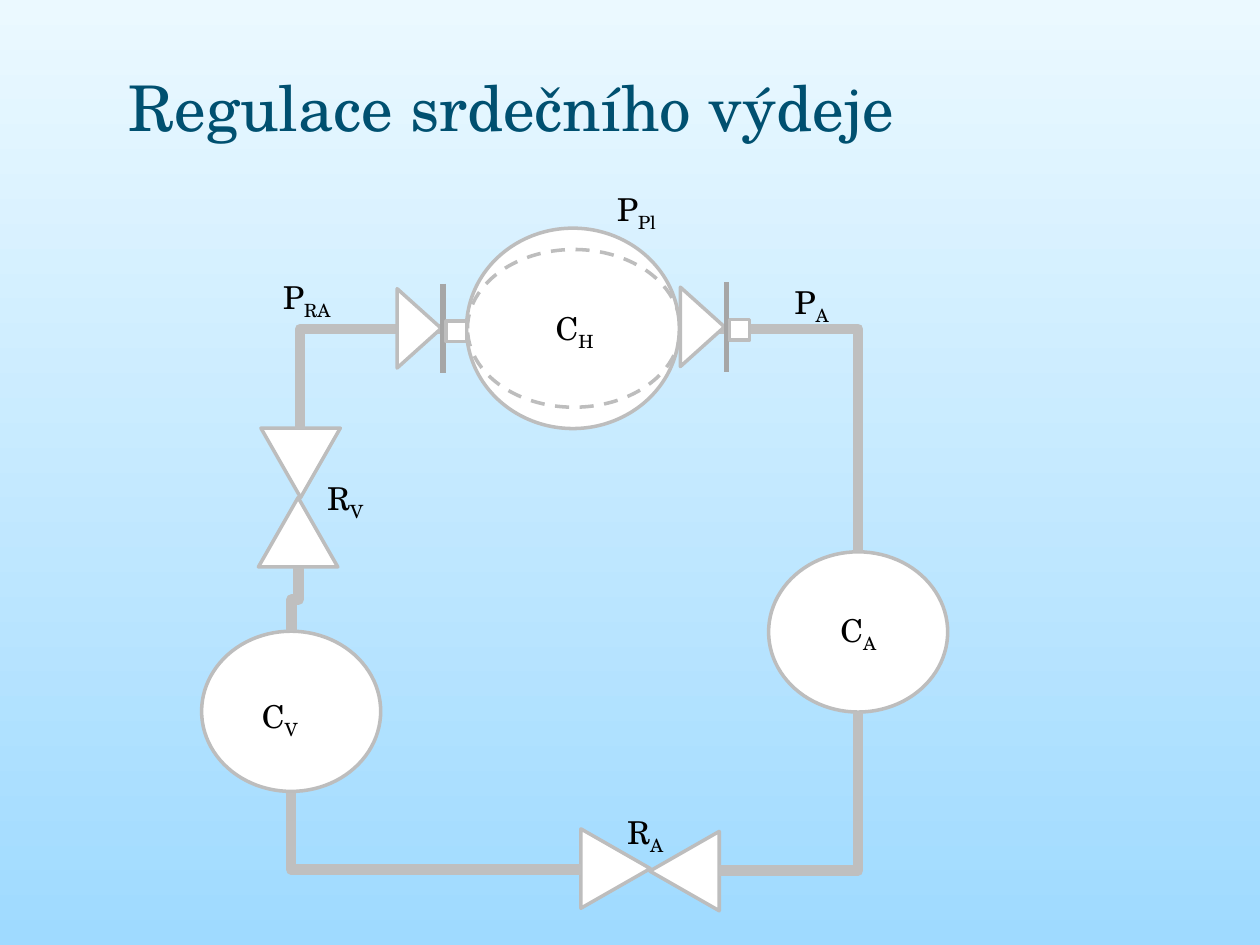
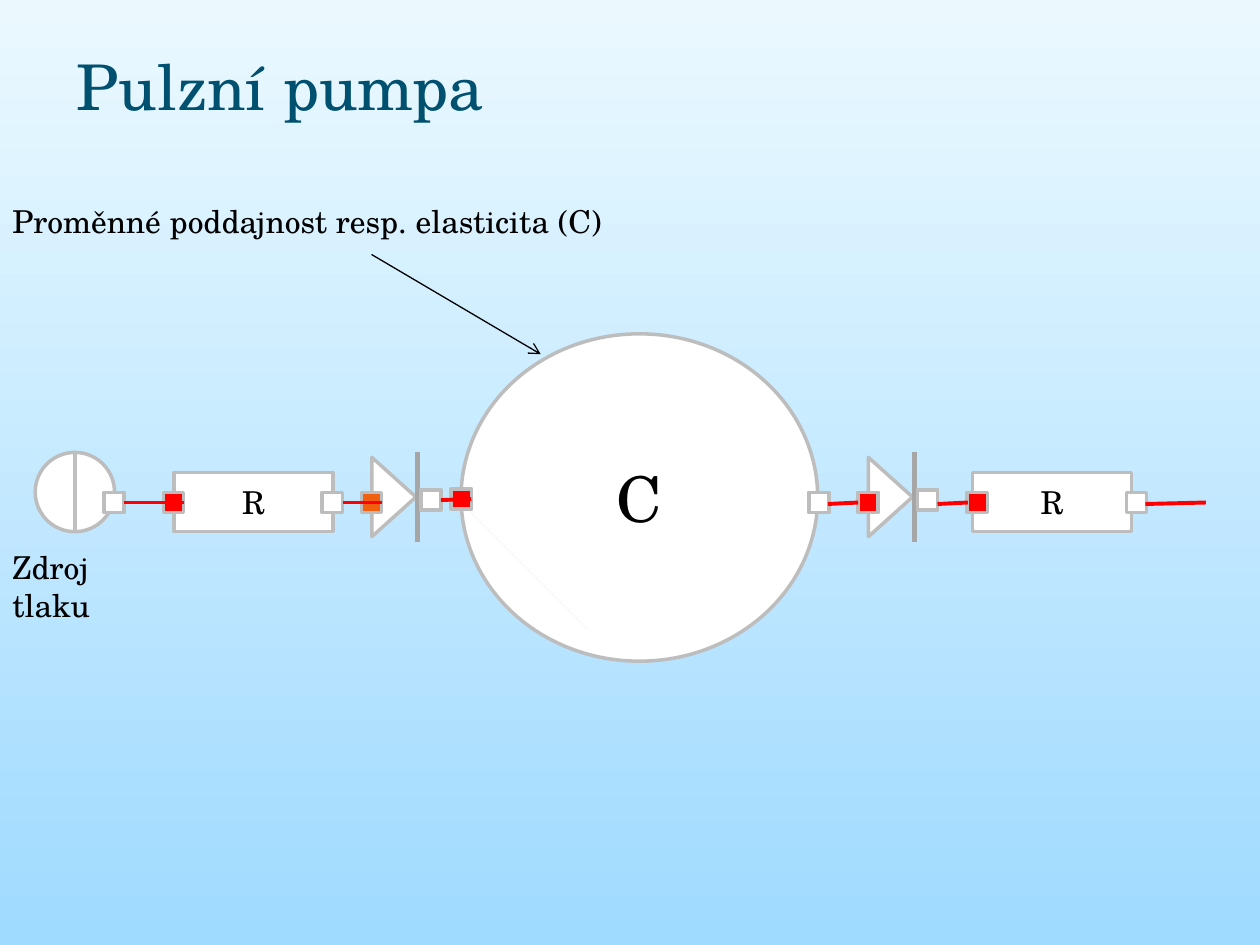
from dataclasses import dataclass

from lxml.etree import SubElement
from pptx import Presentation
from pptx.dml.color import RGBColor
from pptx.enum.dml import MSO_LINE_DASH_STYLE as Dash
from pptx.enum.shapes import MSO_AUTO_SHAPE_TYPE as Shape, MSO_CONNECTOR_TYPE as Connector
from pptx.enum.text import MSO_VERTICAL_ANCHOR as Anchor, PP_PARAGRAPH_ALIGNMENT as Align
from pptx.oxml.ns import qn
from pptx.util import Cm, Pt


@dataclass(frozen=True)
class Theme:
    font: str = "TeX Gyre Schola"
    title_size: int = 36
    body_size: int = 18
    title: str = "005070"
    text: str = "000000"
    sky_top: str = "EBF9FF"
    sky_bottom: str = "9FDAFF"
    white: str = "FFFFFF"
    outline: str = "BDBDBD"
    pipe: str = "BFBFBF"
    valve_bar: str = "A6A6A6"
    faint: str = "F9F9F9"
    red: str = "FF0000"
    orange: str = "F1600F"
    outline_width: float = 2
    wire_width: float = 2.25
    bar_width: float = 3
    pipe_width: float = 6
    thin_width: float = 0.75


class Diagram:
    """Draws on the current slide; points and sizes are in centimetres."""

    def __init__(self, presentation, theme):
        self.presentation = presentation
        self.theme = theme
        self.slide = None

    def new_slide(self, title, left, top):
        theme = self.theme
        self.slide = self.presentation.slides.add_slide(self.presentation.slide_layouts[6])
        fill = self.slide.background.fill
        fill.gradient()
        fill.gradient_angle = 270
        for stop, color, position in zip(fill.gradient_stops, (theme.sky_top, theme.sky_bottom), (0, 1)):
            stop.color.rgb = RGBColor.from_string(color)
            stop.position = position
        box = self.text(title, left, top, 22.83, 2.79, theme.title_size, theme.title)
        box.text_frame.vertical_anchor = Anchor.MIDDLE

    def style_run(self, run, size=None, color=None):
        run.font.name = self.theme.font
        run.font.size = Pt(size or self.theme.body_size)
        run.font.color.rgb = RGBColor.from_string(color or self.theme.text)

    def text(self, text, left, top, width, height=1.02, size=None, color=None):
        box = self.slide.shapes.add_textbox(Cm(left), Cm(top), Cm(width), Cm(height))
        box.text_frame.word_wrap = True
        box.text_frame.text = text
        self.style_run(box.text_frame.paragraphs[0].runs[0], size, color)
        return box

    def symbol(self, letter, subscript, left, top):
        """Write a quantity such as P with a lowered index."""
        paragraph = self.text(letter, left, top, 2.69).text_frame.paragraphs[0]
        run = paragraph.add_run()
        run.text = subscript
        self.style_run(run)
        run.font._element.set("baseline", "-25000")

    def shape(self, kind, center, width, height, fill=None, rotation=0, text="", size=None):
        x, y = center
        shape = self.slide.shapes.add_shape(
            kind, Cm(x - width / 2), Cm(y - height / 2), Cm(width), Cm(height))
        shape.shadow.inherit = False
        shape.rotation = rotation
        shape.fill.solid()
        shape.fill.fore_color.rgb = RGBColor.from_string(fill or self.theme.white)
        shape.line.color.rgb = RGBColor.from_string(self.theme.outline)
        shape.line.width = Pt(self.theme.outline_width)
        if text:
            shape.text_frame.text = text
            shape.text_frame.vertical_anchor = Anchor.MIDDLE
            paragraph = shape.text_frame.paragraphs[0]
            paragraph.alignment = Align.CENTER
            self.style_run(paragraph.runs[0], size)
        return shape

    def line(self, start, end, color, width, kind=Connector.STRAIGHT, arrow=False):
        connector = self.slide.shapes.add_connector(kind, *(Cm(value) for value in (*start, *end)))
        connector.line.color.rgb = RGBColor.from_string(color)
        connector.line.width = Pt(width)
        if arrow:
            SubElement(connector.line._get_or_add_ln(), qn("a:tailEnd"), type="arrow")
        SubElement(connector._element.spPr, qn("a:effectLst"))
        return connector

    def pipe(self, start, end):
        """Run level from start, then turn once towards end."""
        connector = self.line(start, end, self.theme.pipe, self.theme.pipe_width, Connector.ELBOW)
        connector._element.spPr.find(qn("a:prstGeom")).set("prst", "bentConnector2")

    def upright_jog(self, center, length, offset):
        """Run upwards with a small sideways step half way."""
        x, y = center
        start = (x + length / 2, y + offset / 2)
        end = (x - length / 2, y - offset / 2)
        connector = self.line(start, end, self.theme.pipe, self.theme.pipe_width, Connector.ELBOW)
        connector._element.spPr.find(qn("a:xfrm")).set("rot", "5400000")

    def wire(self, start, end):
        self.line(start, end, self.theme.red, self.theme.wire_width)

    def port(self, center, fill=None):
        self.shape(Shape.RECTANGLE, center, 0.41, 0.41, fill)

    def resistance(self, center, rotation):
        self.shape(Shape.ISOSCELES_TRIANGLE, center, 1.6, 1.4, rotation=rotation)

    def check_valve(self, center):
        x, y = center
        self.shape(Shape.ISOSCELES_TRIANGLE, center, 1.6, 0.89, rotation=90)
        bar = x + 0.48
        self.line((bar, y - 0.9), (bar, y + 0.9), self.theme.valve_bar, self.theme.bar_width)
        self.port((x + 0.75, y + 0.06))


def draw_circulation(diagram):
    diagram.new_slide("Regulace srdečního výdeje", 2.34, 0.74)

    diagram.shape(Shape.OVAL, (11.55, 6.62), 4.29, 4.04)
    relaxed_heart = diagram.shape(Shape.OVAL, (11.57, 6.62), 4.29, 3.18)
    relaxed_heart.fill.background()
    relaxed_heart.line.dash_style = Dash.DASH
    for vessel in ((17.3, 12.74), (5.87, 14.34)):
        diagram.shape(Shape.OVAL, vessel, 3.61, 3.23)

    for center, rotation in (((12.41, 17.51), 90), ((13.8, 17.56), 270),
                             ((6.01, 10.73), 0), ((6.06, 9.33), 180)):
        diagram.resistance(center, rotation)

    for start, end in (((9.4, 6.63), (6.05, 8.64)), ((13.72, 6.63), (17.3, 11.13)),
                       ((14.5, 17.55), (17.3, 14.35)), ((11.71, 17.53), (5.87, 15.98))):
        diagram.pipe(start, end)
    diagram.upright_jog((5.95, 12.09), 1.28, 0.14)

    for center in ((8.45, 6.62), (14.16, 6.59)):
        diagram.check_valve(center)

    for letter, subscript, left, top in (
            ("C", "H", 10.95, 6.1), ("C", "A", 16.69, 12.19), ("C", "V", 5.03, 13.92),
            ("R", "A", 12.4, 16.26), ("R", "V", 6.35, 9.53),
            ("P", "A", 15.77, 5.59), ("P", "RA", 5.46, 5.49), ("P", "Pl", 12.19, 3.71)):
        diagram.symbol(letter, subscript, left, top)


def draw_pulse_pump(diagram):
    theme = diagram.theme
    axis = 10.13
    diagram.new_slide("Pulzní pumpa", 1.3, 0.33)

    diagram.shape(Shape.OVAL, (12.89, 10.03), 7.19, 6.6, text="C", size=theme.title_size)
    diagram.line((9.3, axis), (11.84, 12.67), theme.faint, theme.thin_width)
    for x in (5.11, 21.21):
        diagram.shape(Shape.RECTANGLE, (x, 10.12), 3.2, 1.19, text="R")
    diagram.shape(Shape.OVAL, (1.51, 9.92), 1.6, 1.6)
    diagram.line((1.51, 9.12), (1.51, 10.72), theme.pipe, theme.wire_width)
    for x in (7.94, 17.95):
        diagram.check_valve((x, 10.02))

    for x in (2.3, 6.7, 16.51, 22.91):
        diagram.port((x, axis))
    for x in (3.5, 17.5, 19.7):
        diagram.port((x, axis), theme.red)
    diagram.port((9.3, 10.06), theme.red)
    diagram.port((7.49, axis), theme.orange)

    for start, end in (((2.49, axis), (3.71, axis)), ((6.91, axis), (7.7, axis)),
                       ((8.89, 10.08), (9.5, 10.06)), ((16.69, 10.16), (17.3, axis)),
                       ((18.9, 10.16), (19.51, axis)), ((23.09, 10.16), (24.31, axis))):
        diagram.wire(start, end)

    diagram.line((7.49, 5.13), (10.9, 7.14), theme.text, theme.thin_width, arrow=True)
    diagram.text("Proměnné poddajnost resp. elasticita (C)", 0, 3.94, 12.5)
    diagram.text("Zdroj tlaku", 0, 10.92, 3.5)


def main():
    presentation = Presentation()
    presentation.slide_width = Cm(25.4)
    presentation.slide_height = Cm(19.05)
    diagram = Diagram(presentation, Theme())
    draw_circulation(diagram)
    draw_pulse_pump(diagram)
    presentation.save("out.pptx")


if __name__ == "__main__":
    main()
